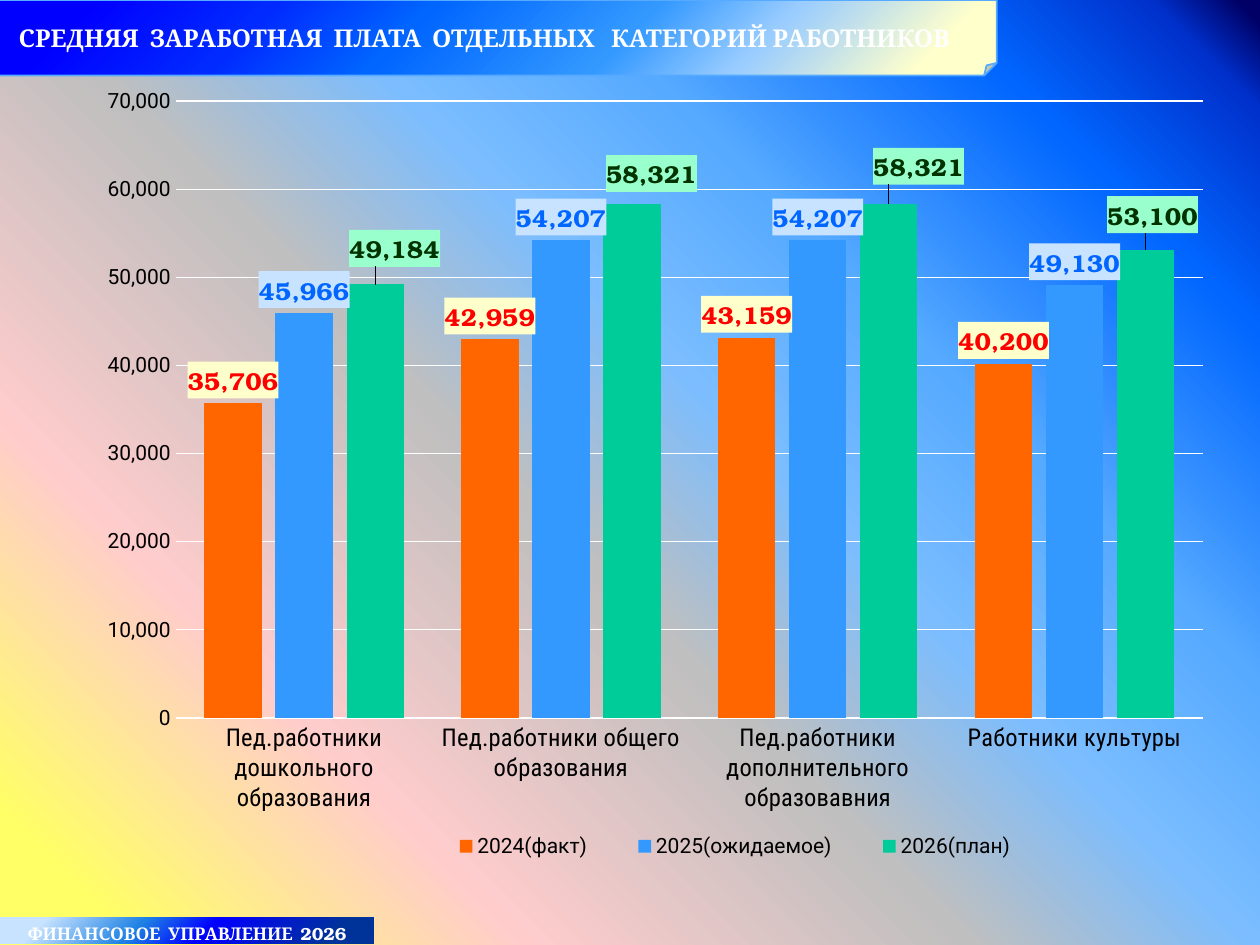
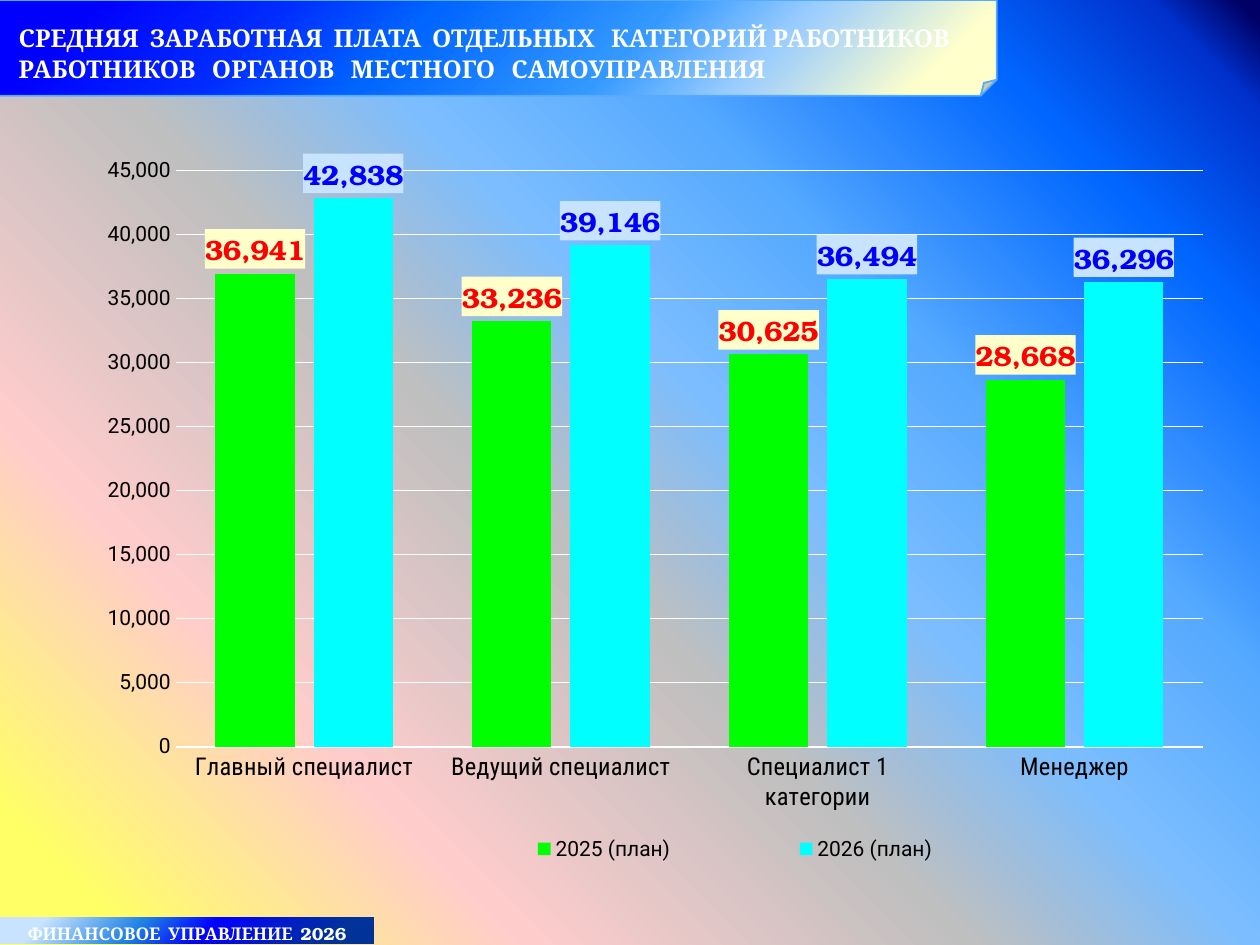
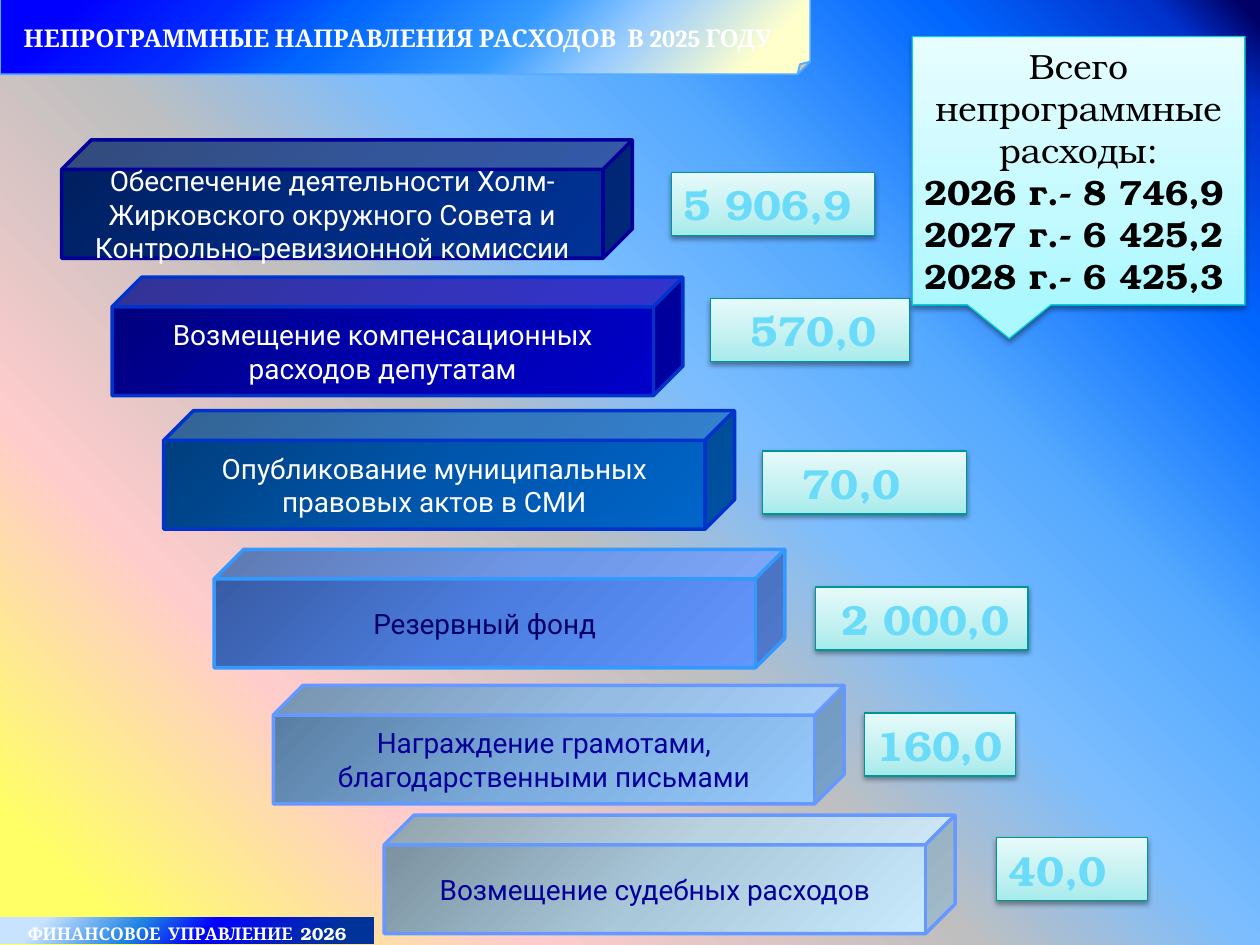
from copy import deepcopy

from lxml import etree
from pptx import Presentation
from pptx.chart.data import CategoryChartData
from pptx.dml.color import RGBColor
from pptx.enum.chart import XL_CHART_TYPE, XL_LABEL_POSITION, XL_LEGEND_POSITION, XL_TICK_MARK
from pptx.enum.shapes import MSO_SHAPE
from pptx.enum.text import MSO_ANCHOR, MSO_AUTO_SIZE, PP_ALIGN
from pptx.oxml import parse_xml
from pptx.oxml.ns import nsdecls, qn
from pptx.util import Inches, Pt

# Shared fonts and colours
SERIF, SANS, NARROW, DISPLAY = "Cambria", "Roboto", "Roboto Condensed", "TeX Gyre Bonum"
WHITE, BLACK, SKY = "FFFFFF", "000000", "56AAFF"
CREAM, PALE_BLUE, MINT = "FFFFCC", "C7E3FF", "99FFCC"

# Gradients: (position, colour) or (position, colour, opacity)
PAGE_STOPS = [(6, "FFFF66"), (24, "FFCCCC"), (44, "BFBFBF"), (57, "7BBDFF", 28),
              (69, SKY), (85, "0066FF"), (95, "0031CC"), (99, "000066")]
RIBBON_STOPS = [(9, "0000FF"), (26, "002AFF"), (41, "0066FF"), (62, "3399FF"),
                (75, "99CCFF"), (92, CREAM), (99, CREAM), (100, "FFFF00")]
FOOTER_STOPS = [(12, "003399"), (45, "0000FF"), (63, "1E81E4"), (88, PALE_BLUE)]
AMOUNT_STOPS = [(0, "A5EBEB"), (35, "C1F0F0"), (100, "E7FAFA")]
TOTAL_STOPS = [(0, "ABF8FF"), (35, "C3FAFF"), (100, "E8FDFF")]

WAGES_TITLE = "СРЕДНЯЯ  ЗАРАБОТНАЯ  ПЛАТА  ОТДЕЛЬНЫХ   КАТЕГОРИЙ РАБОТНИКОВ"

# Chart series: name, values, bar colour, label colour, label fill
STAFF_SERIES = [
    ("2024(факт)", (35706, 42959, 43159, 40200), "FF6600", "FF0000", CREAM),
    ("2025(ожидаемое)", (45966, 54207, 54207, 49130), "3399FF", "0066FF", PALE_BLUE),
    ("2026(план)", (49184, 58321, 58321, 53100), "00CC99", "003300", MINT),
]
OFFICE_SERIES = [
    ("2025 (план)", (36941, 33236, 30625, 28668), "00FF00", "FF0000", CREAM),
    ("2026 (план)", (42838, 39146, 36494, 36296), "00FFFF", "0000FF", PALE_BLUE),
]
PLAN_LABEL_SHIFTS = [(0.017, -0.016), (0.017, -0.009), (0.026, -0.018), (0.006, -0.015)]

# Expenses: left, top, text, text colour, line colour, gradient colours
EXPENSES = [
    (0.49, 1.11, "Обеспечение деятельности Холм-Жирковского окружного Совета и "
     "Контрольно-ревизионной комиссии", WHITE, "000099", ("001E5B", "002B81", "003399")),
    (0.89, 2.2, "Возмещение компенсационных расходов депутатам",
     WHITE, "0033CC", ("000079", "0000AC", "0000CC")),
    (1.3, 3.26, "Опубликование муниципальных правовых актов в СМИ",
     WHITE, "0033CC", ("003C79", "0056AC", "0066CC")),
    (1.7, 4.36, "Резервный фонд", "000066", "3399FF", ("36589E", "4C7EE1", "6699FF")),
    (2.17, 5.44, "Награждение грамотами, благодарственными письмами",
     "000099", "6699FF", ("56799C", "7BACDD", "99CCFF")),
    (3.05, 6.47, "Возмещение судебных расходов",
     "000099", "6699FF", ("778C99", "A9C8DA", "CCECFF")),
]
# Amounts: left, top, width, text, indent
AMOUNTS = [
    (5.33, 1.37, 1.61, "5 906,9", 0), (5.64, 2.37, 1.58, "570,0", 0.22),
    (6.05, 3.58, 1.62, "70,0", 0.22), (6.47, 4.66, 1.69, "2 000,0", 0.11),
    (6.86, 5.66, 1.2, "160,0", 0), (7.91, 6.65, 1.2, "40,0", 0),
]


# Formatting
def color(value):
    return RGBColor.from_string(value)


def set_font(font, size, name, shade, bold=False):
    font.size, font.name, font.bold = Pt(size), name, bold
    font.color.rgb = color(shade)


def paint_gradient(fill, properties, stops, angle=None):
    """Linear at the given angle, or circular from the bottom left corner."""
    fill.gradient()
    old = properties.find(qn("a:gradFill"))
    gradient = parse_xml(f'<a:gradFill {nsdecls("a")} rotWithShape="1"><a:gsLst/></a:gradFill>')
    for position, shade, *opacity in stops:
        stop = etree.SubElement(gradient[0], qn("a:gs"), pos=str(position * 1000))
        tone = etree.SubElement(stop, qn("a:srgbClr"), val=shade)
        if opacity:
            etree.SubElement(tone, qn("a:alpha"), val=str(opacity[0] * 1000))
    if angle is None:
        circle = etree.SubElement(gradient, qn("a:path"), path="circle")
        etree.SubElement(circle, qn("a:fillToRect"), t="100000", r="100000")
    else:
        etree.SubElement(gradient, qn("a:lin"), ang=str(angle * 60000), scaled="0")
    properties.replace(old, gradient)


def drop_shadow(shape):
    effects = shape._element.spPr.find(qn("a:effectLst"))
    shadow = etree.SubElement(effects, qn("a:outerShdw"), blurRad=str(Pt(3.1)),
                              dist=str(Pt(1.6)), dir="5400000", rotWithShape="0")
    tone = etree.SubElement(shadow, qn("a:srgbClr"), val=BLACK)
    etree.SubElement(tone, qn("a:alpha"), val="38000")


def set_layout(parent, index, **places):
    """Give a chart part a manual layout as its child number index."""
    for old in parent.findall(qn("c:layout")):
        parent.remove(old)
    layout = etree.Element(qn("c:layout"))
    manual = etree.SubElement(layout, qn("c:manualLayout"))
    for name, value in places.items():
        etree.SubElement(manual, qn(f"c:{name}"), val=str(value))
    parent.insert(index, layout)


# Elements
def add_panel(page, kind, place, stops, angle, line=None, line_width=1):
    shape = page.shapes.add_shape(kind, *map(Inches, place))
    shape.shadow.inherit = False
    paint_gradient(shape.fill, shape._element.spPr, stops, angle)
    if line:
        shape.line.color.rgb = color(line)
        shape.line.width = Pt(line_width)
    else:
        shape.line.fill.background()
    return shape


def write(frame, lines, size, name, shade, bold=False, align=PP_ALIGN.LEFT):
    frame.word_wrap = True
    frame.text = "\n".join(lines)
    for para in frame.paragraphs:
        para.alignment = align
        for span in para.runs:
            set_font(span.font, size, name, shade, bold)


def add_page(deck):
    page = deck.slides.add_slide(deck.slide_layouts[6])
    fill = page.background.fill
    fill.solid()
    paint_gradient(fill, page._element.cSld.bg.bgPr, PAGE_STOPS)
    return page


def add_title(page, lines, ribbon, left, width):
    add_panel(page, MSO_SHAPE.FOLDED_CORNER, ribbon, RIBBON_STOPS, 45, SKY)
    height = 0.1 + 0.24 * len(lines)
    box = page.shapes.add_textbox(*map(Inches, (left, 0.13, width, height)))
    write(box.text_frame, lines, 14, SERIF, WHITE, True)
    for para in box.text_frame.paragraphs[1:]:
        para.space_before = Pt(1)


def add_footer(page):
    band = add_panel(page, MSO_SHAPE.RECTANGLE, (0, 7.28, 2.97, 0.21), FOOTER_STOPS, 225)
    frame = band.text_frame
    frame.margin_top = frame.margin_bottom = 0
    frame.vertical_anchor = MSO_ANCHOR.BOTTOM
    write(frame, ["ФИНАНСОВОЕ  УПРАВЛЕНИЕ  "], 10, SERIF, WHITE, True, PP_ALIGN.CENTER)
    year = frame.paragraphs[0].add_run()
    year.text = "2026"
    set_font(year.font, 10, DISPLAY, WHITE, True)


def label_series(series, size, shade, background):
    labels = series.data_labels
    labels.show_value = True
    labels.number_format, labels.number_format_is_linked = "#,##0", False
    labels.position = XL_LABEL_POSITION.OUTSIDE_END
    set_font(labels.font, size, DISPLAY, shade, True)
    labels._element.find(qn("c:txPr")).addprevious(parse_xml(
        f'<c:spPr {nsdecls("c", "a")}><a:solidFill><a:srgbClr val="{background}"/>'
        '</a:solidFill></c:spPr>'))


def shift_labels(series, shifts):
    """Move each label of a series, keeping the look of the series labels."""
    labels = series.data_labels._element
    shared = [part for part in labels if part.tag != qn("c:showLeaderLines")]
    for index, (across, down) in enumerate(shifts):
        label = etree.Element(qn("c:dLbl"))
        etree.SubElement(label, qn("c:idx"), val=str(index))
        label.extend(deepcopy(part) for part in shared)
        set_layout(label, 1, x=across, y=down)
        labels.insert(index, label)


def add_wage_chart(page, top, categories, series_list, maximum, step, label_size, plot_height):
    data = CategoryChartData(number_format="#,##0")
    data.categories = categories
    for name, values, *_ in series_list:
        data.add_series(name, values)
    place = map(Inches, (0.67, top, 9.06, 6.94 - top))
    chart = page.shapes.add_chart(XL_CHART_TYPE.COLUMN_CLUSTERED, *place, data).chart
    chart.has_title = False
    set_font(chart.font, 10, SANS, WHITE)

    # Bars and labels
    plot = chart.plots[0]
    plot.gap_width, plot.overlap, plot.vary_by_categories = 100, -24, False
    for series, (_, _, shade, label_shade, background) in zip(plot.series, series_list):
        series.invert_if_negative = False
        series.format.fill.solid()
        series.format.fill.fore_color.rgb = color(shade)
        label_series(series, label_size, label_shade, background)

    # Axes
    category_axis, value_axis = chart.category_axis, chart.value_axis
    for axis, size, name in ((category_axis, 14, NARROW), (value_axis, 12, SANS)):
        axis.major_tick_mark = axis.minor_tick_mark = XL_TICK_MARK.NONE
        set_font(axis.tick_labels.font, size, name, BLACK)
    category_axis.format.line.color.rgb = color(WHITE)
    category_axis.format.line.width = Pt(1)
    value_axis.minimum_scale, value_axis.maximum_scale = 0, maximum
    value_axis.major_unit = step
    value_axis.format.line.fill.background()
    value_axis.tick_labels.number_format = "#,##0"
    value_axis.tick_labels.number_format_is_linked = False
    grid = value_axis.major_gridlines.format.line
    grid.color.rgb, grid.width = color(WHITE), Pt(0.75)

    # Legend and layout
    chart.has_legend = True
    legend = chart.legend
    legend.position, legend.include_in_layout = XL_LEGEND_POSITION.BOTTOM, False
    set_font(legend.font, 12, SANS, BLACK)
    set_layout(legend._element, 1, xMode="edge", yMode="edge", x=0.29, y=0.93, w=0.56, h=0.07)
    set_layout(chart._chartSpace.chart.plotArea, 0, layoutTarget="inner", xMode="edge",
               yMode="edge", x=0.08, y=0.035, w=0.9, h=plot_height)
    return chart


def add_expense(page, left, top, text, shade, line, shades):
    stops = list(zip((0, 50, 100), shades))
    cube = add_panel(page, MSO_SHAPE.CUBE, (left, top, 4.53, 0.94), stops, 45, line, 2)
    cube.text_frame.vertical_anchor = MSO_ANCHOR.MIDDLE
    write(cube.text_frame, [text], 16, SANS, shade, align=PP_ALIGN.CENTER)


def add_amount(page, left, top, width, text, indent):
    box = add_panel(page, MSO_SHAPE.RECTANGLE, (left, top, width, 0.5),
                    AMOUNT_STOPS, 270, "009696", 0.75)
    drop_shadow(box)
    frame = box.text_frame
    frame.vertical_anchor = MSO_ANCHOR.TOP
    frame.margin_left = Inches(0.1 + indent)
    write(frame, [text], 24, DISPLAY, "6BDBFA", True)
    frame.auto_size = MSO_AUTO_SIZE.SHAPE_TO_FIT_TEXT
    properties = frame.paragraphs[0].runs[0].font._element
    properties.insert(0, parse_xml(
        f'<a:ln {nsdecls("a")} w="{Pt(1.75)}"><a:solidFill><a:srgbClr val="04617B"/>'
        '</a:solidFill></a:ln>'))


def add_total(page):
    callout = add_panel(page, MSO_SHAPE.RECTANGULAR_CALLOUT, (7.24, 0.29, 2.64, 2.13),
                        TOTAL_STOPS, 270, "06D0D9", 0.75)
    drop_shadow(callout)
    frame = callout.text_frame
    frame.vertical_anchor = MSO_ANCHOR.MIDDLE
    lines = ["Всего непрограммные расходы:", "2026 г.- 8 746,9",
             "2027 г.- 6 425,2", "2028 г.- 6 425,3"]
    write(frame, lines, 20, DISPLAY, BLACK, True, PP_ALIGN.JUSTIFY)
    heading = frame.paragraphs[0]
    heading.alignment = PP_ALIGN.CENTER
    heading.runs[0].font.bold = False


def main():
    deck = Presentation()
    deck.slide_width, deck.slide_height = Inches(10), Inches(7.5)

    # Wages by staff category
    page = add_page(deck)
    add_title(page, [WAGES_TITLE], (-0.01, 0, 7.92, 0.6), 0.05, 8.26)
    categories = ["Пед.работники дошкольного образования", "Пед.работники общего образования",
                  "Пед.работники дополнительного образовавния", "Работники культуры"]
    chart = add_wage_chart(page, 0.58, categories, STAFF_SERIES, 70000, 10000, 14, 0.77)
    shift_labels(chart.plots[0].series[2], PLAN_LABEL_SHIFTS)
    add_footer(page)

    # Wages in local government
    page = add_page(deck)
    add_title(page, [WAGES_TITLE, "РАБОТНИКОВ   ОРГАНОВ   МЕСТНОГО   САМОУПРАВЛЕНИЯ"],
              (-0.01, 0, 7.92, 0.76), 0.05, 8.26)
    categories = ["Главный специалист", "Ведущий специалист",
                  "Специалист 1 категории", "Менеджер"]
    add_wage_chart(page, 1.15, categories, OFFICE_SERIES, 45000, 5000, 16, 0.79)
    add_footer(page)

    # Expenses outside programmes
    page = add_page(deck)
    add_title(page, ["НЕПРОГРАММНЫЕ НАПРАВЛЕНИЯ РАСХОДОВ  В 2025 ГОДУ"],
              (0, -0.01, 6.43, 0.6), 0.09, 6.34)
    for expense in EXPENSES:
        add_expense(page, *expense)
    for amount in AMOUNTS:
        add_amount(page, *amount)
    add_total(page)
    add_footer(page)

    deck.save("out.pptx")


if __name__ == "__main__":
    main()
